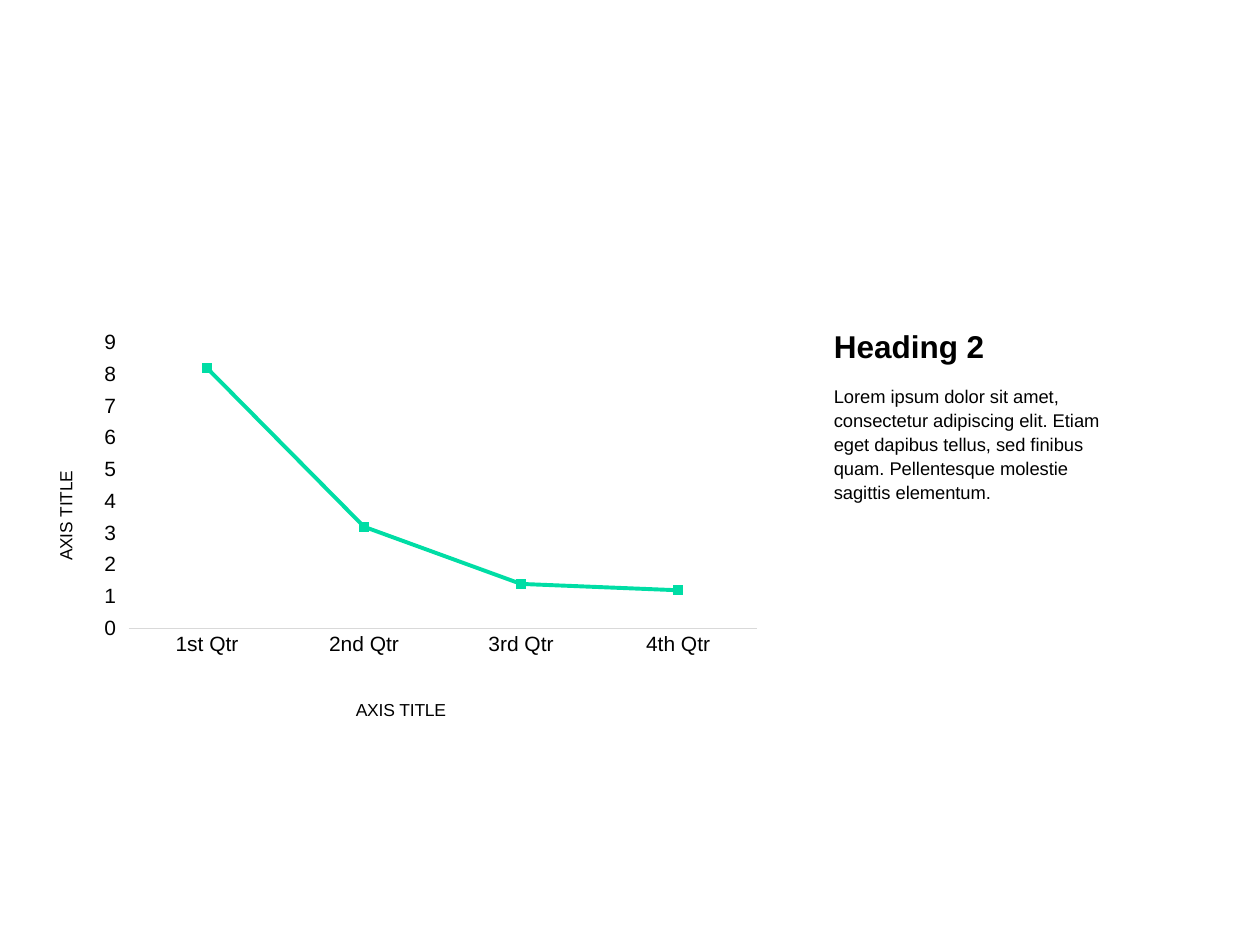
from lxml import etree
from pptx import Presentation
from pptx.chart.data import CategoryChartData
from pptx.dml.color import RGBColor
from pptx.enum.chart import XL_CHART_TYPE, XL_TICK_MARK
from pptx.oxml.ns import qn
from pptx.util import Cm, Pt

LINE = XL_CHART_TYPE.LINE
TICK_NONE, TICK_OUT = XL_TICK_MARK.NONE, XL_TICK_MARK.OUTSIDE
FONT, BLACK, GREEN, GREY = "Arial", "000000", "00DDA5", "D9D9D9"


def format_text(p, text, size, bold=False, spacing=None, before=0):
    r = p.add_run()
    r.text = text
    r.font.name, r.font.size, r.font.bold = FONT, Pt(size), bold
    r.font.color.rgb = RGBColor.from_string(BLACK)
    if spacing:
        p.line_spacing = spacing
        p.space_before = Pt(before)


def place(parent, index, **fractions):
    """Give a chart part a manual layout, in fractions of the chart."""
    for old in parent.findall(qn("c:layout")):
        parent.remove(old)
    layout = etree.Element(qn("c:layout"))
    parent.insert(index, layout)
    manual = etree.SubElement(layout, qn("c:manualLayout"))
    if "w" in fractions:
        etree.SubElement(manual, qn("c:layoutTarget")).set("val", "inner")
    for mode in ("xMode", "yMode"):
        etree.SubElement(manual, qn("c:" + mode)).set("val", "edge")
    for key, value in fractions.items():
        etree.SubElement(manual, qn("c:" + key)).set("val", str(value))


prs = Presentation()
prs.slide_width, prs.slide_height = Cm(25.4), Cm(19.05)
s = prs.slides.add_slide(prs.slide_layouts[6])

# Line chart
data = CategoryChartData()
data.categories = ["1st Qtr", "2nd Qtr", "3rd Qtr", "4th Qtr"]
data.add_series("Series 1", [8.2, 3.2, 1.4, 1.2])
chart = s.shapes.add_chart(LINE, Cm(0.74), Cm(6.55), Cm(14.81), Cm(8.08), data).chart
chart.has_title = chart.has_legend = False
chart.font.name, chart.font.size = FONT, Pt(10)
chart.font.color.rgb = RGBColor.from_string(BLACK)
place(chart.plots[0]._element.getparent(), 0, x=0.125, y=0.045, w=0.855, h=0.724)

series = chart.plots[0].series[0]
series.smooth = False
series.marker.style = None
series.format.line.width = Pt(2.25)
series.format.line.color.rgb = RGBColor.from_string(GREEN)
series.format.line._get_or_add_ln().set("cap", "rnd")

# Axes and their titles
cat_axis, val_axis = chart.category_axis, chart.value_axis
for axis, tick, x, y in [(cat_axis, TICK_NONE, 0.43, 0.94),
                         (val_axis, TICK_OUT, 0.02, 0.365)]:
    axis.has_major_gridlines = False
    axis.major_tick_mark, axis.minor_tick_mark = tick, TICK_NONE
    font = axis.tick_labels.font
    font.name, font.size = FONT, Pt(12)
    font.color.rgb = RGBColor.from_string(BLACK)
    title = axis.axis_title
    format_text(title.text_frame.paragraphs[0], "AXIS TITLE", 10)
    place(title._element, 1, x=x, y=y)
cat_axis.format.line.width = Pt(0.75)
cat_axis.format.line.color.rgb = RGBColor.from_string(GREY)
val_axis.format.line.fill.background()
val_axis.minimum_scale, val_axis.maximum_scale, val_axis.major_unit = 0, 9, 1
body = val_axis.axis_title.text_frame._txBody.find(qn("a:bodyPr"))
body.set("rot", "-5400000")
body.set("vert", "horz")

# Heading and paragraph beside the chart
tf = s.shapes.add_textbox(Cm(16.56), Cm(6.55), Cm(6.45), Cm(5.03)).text_frame
tf.word_wrap = True
format_text(tf.paragraphs[0], "Heading 2", 18, bold=True, spacing=0.9)
format_text(tf.add_paragraph(),
            "Lorem ipsum dolor sit amet, consectetur adipiscing elit. Etiam eget "
            "dapibus tellus, sed finibus quam. Pellentesque molestie sagittis "
            "elementum.", 10.5, spacing=1.1, before=10)

prs.save("out.pptx")
